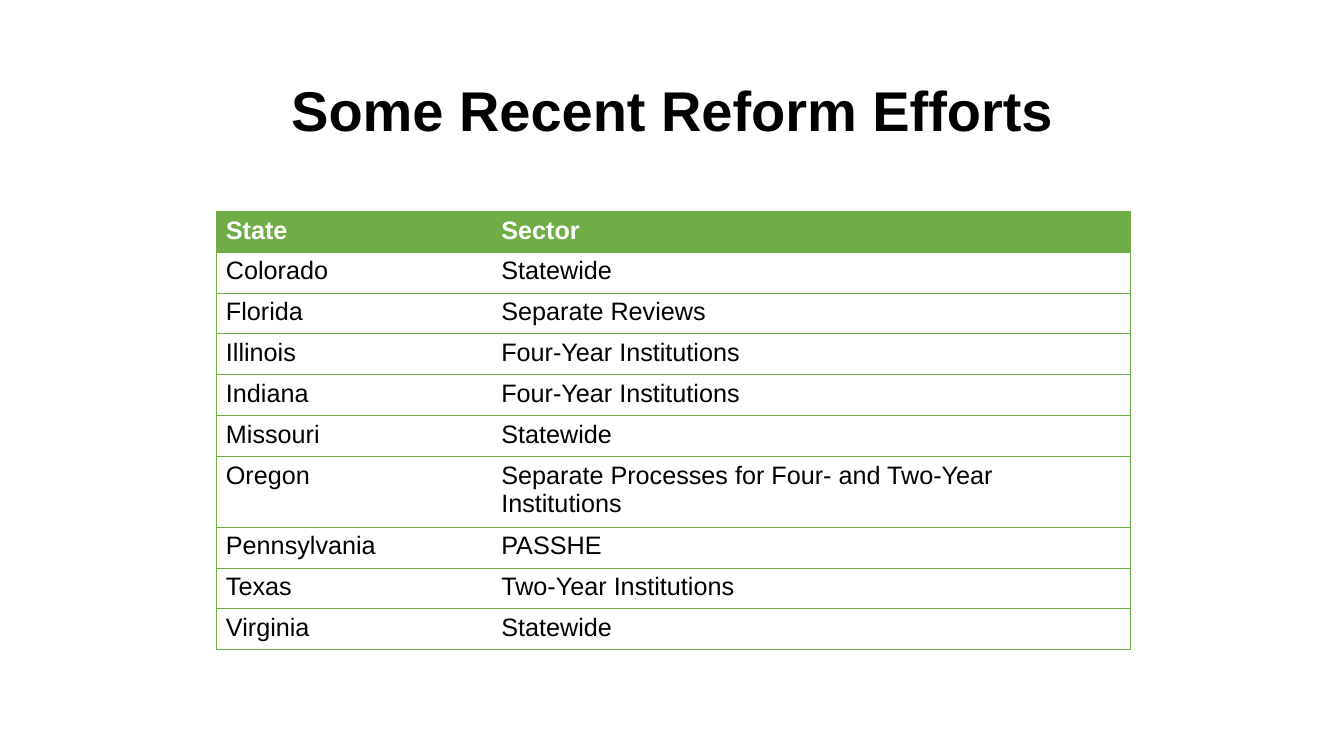
from dataclasses import dataclass

from lxml.etree import SubElement
from pptx import Presentation
from pptx.dml.color import RGBColor
from pptx.enum.text import MSO_ANCHOR, PP_ALIGN
from pptx.oxml.ns import qn
from pptx.util import Cm, Pt


@dataclass(frozen=True)
class Theme:
    font: str = "Arial"
    title_size: int = 40
    table_size: int = 18
    text: str = "000000"
    header_text: str = "FFFFFF"
    accent: str = "70AD47"
    border: float = 0.5


THEME = Theme()

REFORMS = [
    ("State", "Sector"),
    ("Colorado", "Statewide"),
    ("Florida", "Separate Reviews"),
    ("Illinois", "Four-Year Institutions"),
    ("Indiana", "Four-Year Institutions"),
    ("Missouri", "Statewide"),
    ("Oregon", "Separate Processes for Four- and Two-Year Institutions"),
    ("Pennsylvania", "PASSHE"),
    ("Texas", "Two-Year Institutions"),
    ("Virginia", "Statewide"),
]
COLUMN_WIDTHS = (6.94, 16.1)
ROW_HEIGHT = 1.03


def write(tf, text, *, size, color=THEME.text, bold=False,
          align=PP_ALIGN.LEFT, spacing=1.0):
    p = tf.paragraphs[0]
    p.alignment = align
    p.line_spacing = spacing
    r = p.add_run()
    r.text = text
    r.font.name = THEME.font
    r.font.size = Pt(size)
    r.font.bold = bold
    r.font.color.rgb = RGBColor.from_string(color)


def set_borders(cell, sides):
    """Draw the given sides (of L, R, T, B) and clear the others."""
    tc_pr = cell._tc.get_or_add_tcPr()
    for side in "LRTB":
        ln = SubElement(tc_pr, qn(f"a:ln{side}"), w=str(Pt(THEME.border)))
        if side in sides:
            fill = SubElement(ln, qn("a:solidFill"))
            SubElement(fill, qn("a:srgbClr"), val=THEME.accent)
        else:
            SubElement(ln, qn("a:noFill"))


def add_title(s, text):
    sp = s.shapes.add_textbox(Cm(2.33), Cm(1.01), Cm(29.21), Cm(3.68))
    tf = sp.text_frame
    tf.word_wrap = True
    tf.vertical_anchor = MSO_ANCHOR.MIDDLE
    write(tf, text, size=THEME.title_size, bold=True,
          align=PP_ALIGN.CENTER, spacing=0.9)


def add_grid(s, rows):
    """Add a table with a filled header, row rules and an outer frame."""
    table = s.shapes.add_table(
        len(rows), len(COLUMN_WIDTHS), Cm(5.44), Cm(5.32),
        Cm(sum(COLUMN_WIDTHS)), Cm(ROW_HEIGHT * len(rows))).table
    table.horz_banding = False
    for column, width in zip(table.columns, COLUMN_WIDTHS):
        column.width = Cm(width)
    for i, row in enumerate(rows):
        table.rows[i].height = Cm(ROW_HEIGHT)
        header = i == 0
        for j, text in enumerate(row):
            cell = table.cell(i, j)
            set_borders(cell, "LTB" if j == 0 else "RTB")
            if header:
                cell.fill.solid()
                cell.fill.fore_color.rgb = RGBColor.from_string(THEME.accent)
            else:
                cell.fill.background()
            write(cell.text_frame, text, size=THEME.table_size, bold=header,
                  color=THEME.header_text if header else THEME.text)


def main():
    prs = Presentation()
    prs.slide_width, prs.slide_height = Cm(33.87), Cm(19.05)
    s = prs.slides.add_slide(prs.slide_layouts[6])
    add_title(s, "Some Recent Reform Efforts")
    add_grid(s, REFORMS)
    prs.save("out.pptx")


if __name__ == "__main__":
    main()
